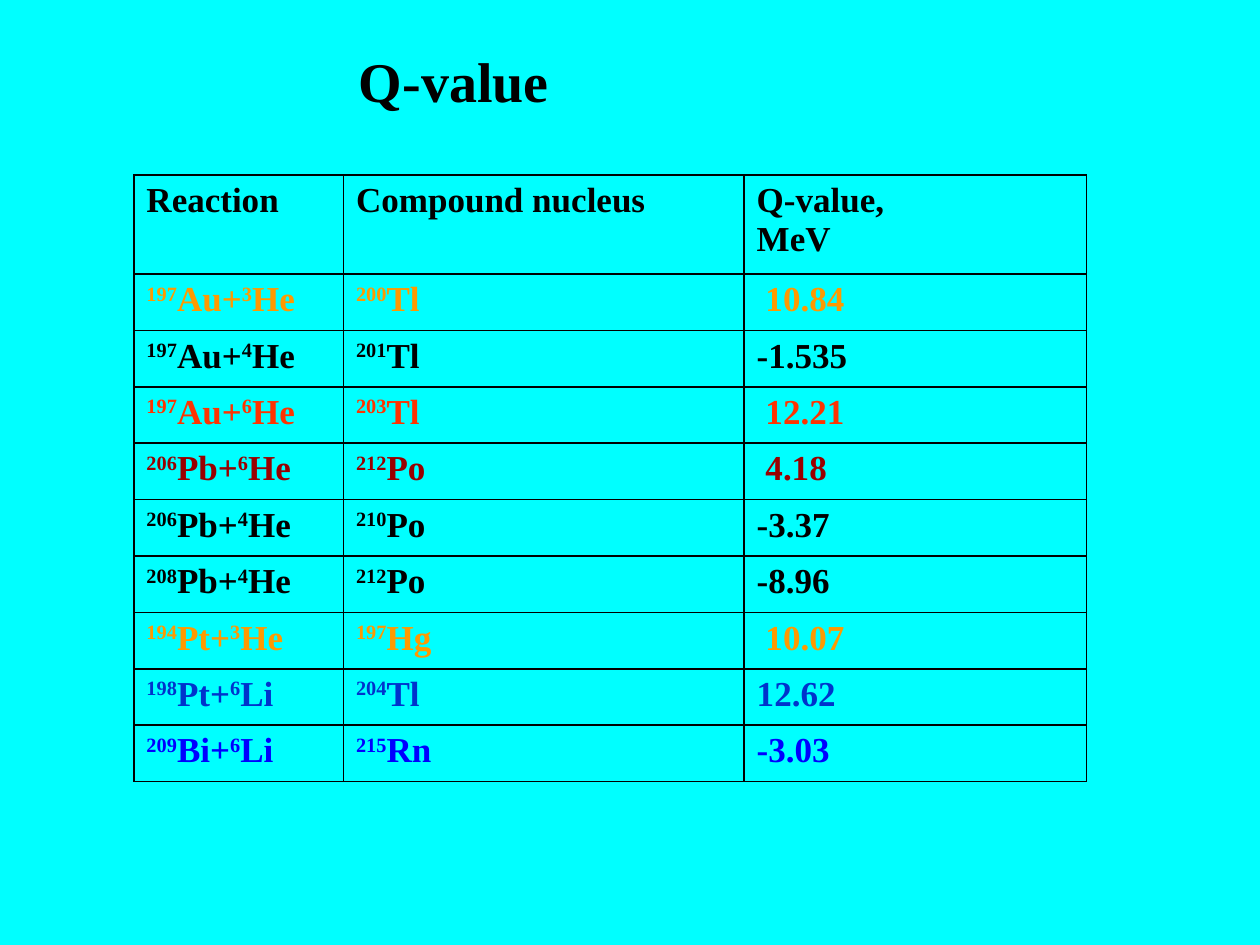
from dataclasses import dataclass
from itertools import groupby

from lxml import etree
from pptx import Presentation
from pptx import util as u
from pptx.dml import color
from pptx.enum import text
from pptx.oxml import ns


@dataclass
class Theme:
    face: str = "Times New Roman"
    head: int = 32
    body: int = 20
    back: str = "00FFFF"
    ink: str = "000000"
    gold: str = "FF9900"
    red: str = "FF3300"
    wine: str = "990000"
    navy: str = "0033CC"
    blue: str = "0000FF"


class Deck:
    def __init__(self, theme):
        self.theme = theme
        self.file = Presentation()
        self.file.slide_width, self.file.slide_height = u.Pt(720), u.Pt(540)
        self.slide = self.file.slides.add_slide(self.file.slide_layouts[6])
        fill = self.slide.background.fill
        fill.solid()
        fill.fore_color.rgb = color.RGBColor.from_string(theme.back)

    def run(self, para, words, size, tint, high=False):
        run = para.add_run()
        run.text = words
        look = {"name": self.theme.face, "size": u.Pt(size), "bold": True}
        for key, value in look.items():
            setattr(run.font, key, value)
        run.font.color.rgb = color.RGBColor.from_string(tint)
        if high:
            run._r.get_or_add_rPr().set("baseline", "30000")

    def title(self, words, left, top, width, height):
        box = self.slide.shapes.add_textbox(*map(u.Pt, (left, top, width, height)))
        frame = box.text_frame
        look = {"word_wrap": True, "vertical_anchor": text.MSO_ANCHOR.MIDDLE,
                "margin_bottom": u.Pt(18.7)}
        for key, value in look.items():
            setattr(frame, key, value)
        self.run(frame.paragraphs[0], words, self.theme.head, self.theme.ink)

    def edge(self, cell):
        props = cell._tc.get_or_add_tcPr()
        for side in ("lnL", "lnR", "lnT", "lnB"):
            line = etree.SubElement(props, ns.qn(f"a:{side}"), w=str(u.Pt(1)))
            fill = etree.SubElement(line, ns.qn("a:solidFill"))
            etree.SubElement(fill, ns.qn("a:srgbClr"), val=self.theme.ink)
        cell.fill.background()

    def cell(self, cell, words, tint, mass):
        """Fill one cell; in nuclide cells the mass numbers are raised."""
        self.edge(cell)
        frame = cell.text_frame
        for i, line in enumerate(words.split("\n")):
            para = frame.add_paragraph() if i else frame.paragraphs[0]
            parts = groupby(line, str.isdigit) if mass else [(False, line)]
            for high, part in parts:
                self.run(para, "".join(part), self.theme.body, tint, high)

    def table(self, rows, left, top, widths, heights):
        size = (left, top, sum(widths), sum(heights))
        grid = self.slide.shapes.add_table(
            len(rows), len(widths), *map(u.Pt, size)).table
        grid.first_row = grid.horz_banding = False
        for col, width in zip(grid.columns, widths):
            col.width = u.Pt(width)
        for row, height, (tint, *items) in zip(grid.rows, heights, rows):
            row.height = u.Pt(height)
            for n, (cell, words) in enumerate(zip(row.cells, items)):
                self.cell(cell, words, tint, n < 2)


def main():
    theme = Theme()
    deck = Deck(theme)

    # Title
    deck.title(" Q-value", 190, 20, 153.5, 67)

    # Reactions: colour, reaction, compound nucleus, Q-value
    rows = [
        (theme.ink, "Reaction", "Compound nucleus", "Q-value,\nMeV"),
        (theme.gold, "197Au+3He", "200Tl", " 10.84"),
        (theme.ink, "197Au+4He", "201Tl", "-1.535"),
        (theme.red, "197Au+6He", "203Tl", " 12.21"),
        (theme.wine, "206Pb+6He", "212Po", " 4.18"),
        (theme.ink, "206Pb+4He", "210Po", "-3.37"),
        (theme.ink, "208Pb+4He", "212Po", "-8.96"),
        (theme.gold, "194Pt+3He", "197Hg", " 10.07"),
        (theme.navy, "198Pt+6Li", "204Tl", "12.62"),
        (theme.blue, "209Bi+6Li", "215Rn", "-3.03"),
    ]
    heights = [56.6] + [32.25] * (len(rows) - 1)
    deck.table(rows, 76.5, 100, (119.75, 229, 195.75), heights)

    deck.file.save("out.pptx")


if __name__ == "__main__":
    main()
